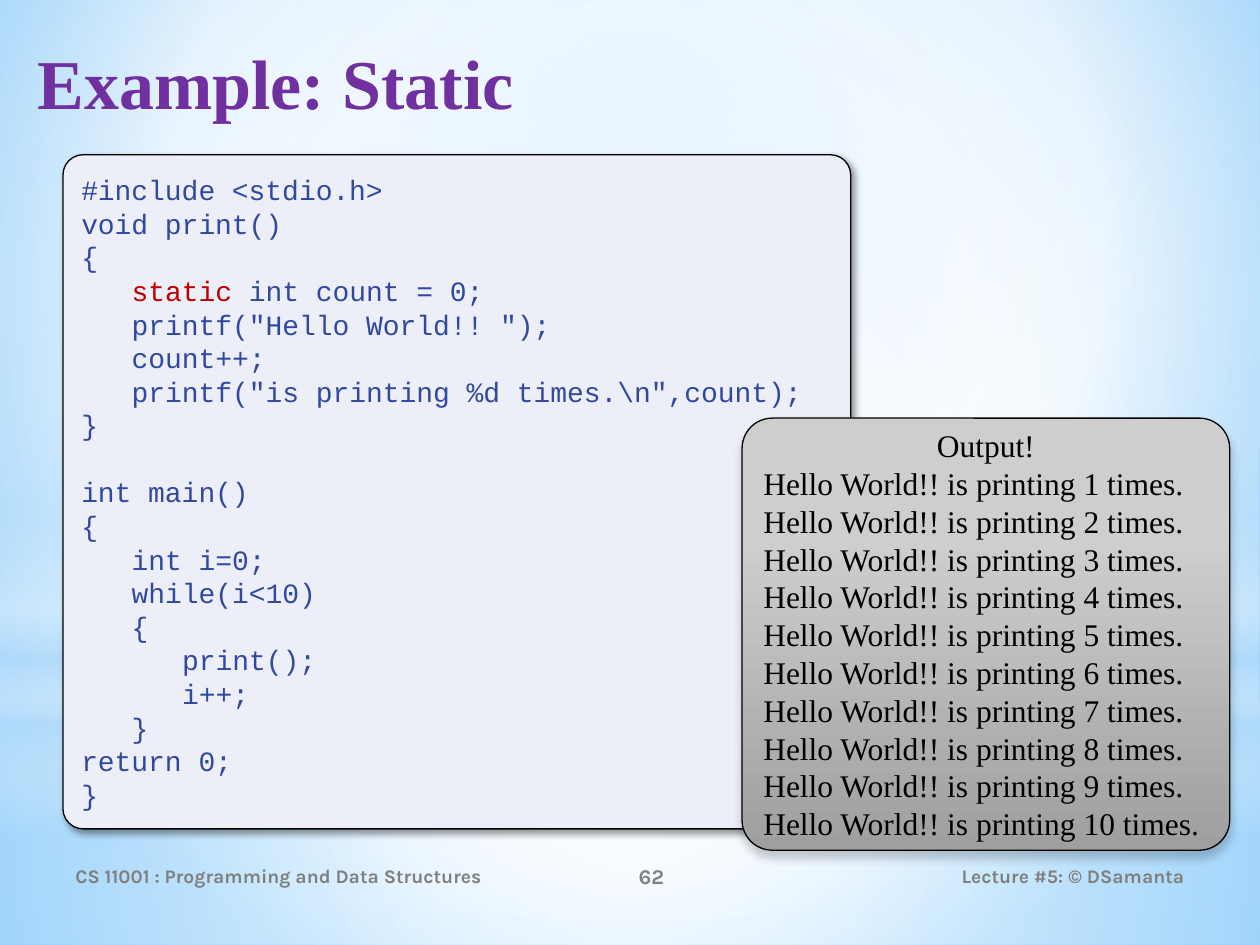
from dataclasses import dataclass

from lxml.etree import SubElement as Sub
from pptx import Presentation
from pptx.dml.color import RGBColor as Rgb
from pptx.enum.shapes import MSO_SHAPE as Form
from pptx.enum.text import MSO_ANCHOR as Anchor, PP_ALIGN as Align
from pptx.oxml import parse_xml
from pptx.oxml.ns import nsdecls, qn
from pptx.util import Cm, Pt


@dataclass(frozen=True)
class Theme:
    serif: str = "Times New Roman"
    mono: str = "Courier New"
    sans: str = "Karla"
    title: str = "7030A0"
    code: str = "31489F"
    key: str = "C00000"
    foot: str = "808080"
    ink: str = "000000"
    panel: str = "ECEFF8"
    white: str = "FFFFFF"
    sky: str = "B4DCFA"
    deep: str = "5BB9FF"
    pale: str = "9ED5FF"
    light: str = "CECECE"
    dark: str = "9F9F9F"
    head_size: float = 40
    code_size: float = 16
    out_size: float = 18
    foot_size: float = 11
    page_size: float = 12


def add_color(node, color, alpha=100):
    clr = Sub(node, qn("a:srgbClr"), val=color)
    if alpha < 100:
        Sub(clr, qn("a:alpha"), val=str(alpha * 1000))


def set_grad(host, stops, focus=None):
    """Swap the solid fill in host for a gradient; without a focus it runs down."""
    grad = parse_xml(f"<a:gradFill {nsdecls('a')} rotWithShape='1'><a:gsLst/></a:gradFill>")
    for pos, color, alpha in stops:
        add_color(Sub(grad[0], qn("a:gs"), pos=str(pos * 1000)), color, alpha)
    if focus:
        track = Sub(grad, qn("a:path"), path="circle")
        Sub(track, qn("a:fillToRect"),
            {side: str(val * 1000) for side, val in zip("ltrb", focus)})
    else:
        Sub(grad, qn("a:lin"), ang="5400000", scaled="0")
    solid = host.find(qn("a:solidFill"))
    host.replace(solid, grad)


def put_text(para, text, *, font, size, color, bold=False, align=Align.LEFT,
             indent=0, lead=None, gap=0, key=None, key_color=None):
    """Write one paragraph; a leading key word gets its own colour."""
    para.alignment = align
    para.space_before = Pt(gap)
    if lead:
        para.line_spacing = Pt(lead)
    if indent:
        para._p.get_or_add_pPr().set("marL", str(Pt(indent)))
    parts = [(text, color)]
    if key and text.startswith(key):
        parts = [(key, key_color), (text[len(key):], color)]
    for part, tint in parts:
        run = para.add_run()
        run.text = part
        run.font.name, run.font.size, run.font.bold = font, Pt(size), bold
        run.font.color.rgb = Rgb.from_string(tint)


class Deck:
    def __init__(self, theme):
        self.theme = theme
        self.file = Presentation()
        self.file.slide_width, self.file.slide_height = Cm(25.4), Cm(19.05)
        self.slide = self.file.slides.add_slide(self.file.slide_layouts[6])

    def back(self, stops, focus):
        fill = self.slide.background.fill
        fill.solid()
        fill.fore_color.rgb = Rgb.from_string(self.theme.white)
        set_grad(self.slide.element.find(".//" + qn("p:bgPr")), stops, focus)

    def shape(self, form, box, color=None, stops=None, focus=None):
        item = self.slide.shapes.add_shape(form, *map(Cm, box))
        item.shadow.inherit = False
        item.line.fill.background()
        item.fill.solid()
        item.fill.fore_color.rgb = Rgb.from_string(color or self.theme.white)
        if stops:
            set_grad(item._element.spPr, stops, focus)
        return item

    def panel(self, box, round_by, shade, rows, **look):
        """Rounded box with a shadow; rows are (text, format) pairs."""
        item = self.shape(Form.ROUNDED_RECTANGLE, box, **look)
        item.adjustments[0] = round_by
        item.line.color.rgb = Rgb.from_string(self.theme.ink)
        item.line.width = Pt(0.75)
        alpha, blur, dist, turn = shade
        glow = Sub(item._element.spPr.find(qn("a:effectLst")), qn("a:outerShdw"),
                   blurRad=str(Pt(blur)), dist=str(Pt(dist)),
                   dir=str(turn * 60000), rotWithShape="0")
        add_color(glow, self.theme.ink, alpha)
        self.fill_in(item.text_frame, rows, Anchor.MIDDLE)

    def label(self, box, text, anchor=Anchor.MIDDLE, **style):
        item = self.slide.shapes.add_textbox(*map(Cm, box))
        self.fill_in(item.text_frame, [(text, style)], anchor)

    def fill_in(self, frame, rows, anchor):
        frame.word_wrap = True
        frame.vertical_anchor = anchor
        for num, (text, style) in enumerate(rows):
            para = frame.add_paragraph() if num else frame.paragraphs[0]
            put_text(para, text, **style)


CODE = [  # indent level, line
    (0, "#include <stdio.h>"),
    (0, "void print()"),
    (0, "{"),
    (1, "static int count = 0;"),
    (1, 'printf("Hello World!! ");'),
    (1, "count++;"),
    (1, 'printf("is printing %d times.\\n",count);'),
    (0, "}"),
    (0, "int main()"),
    (0, "{"),
    (1, "int i=0;"),
    (1, "while(i<10)"),
    (1, "{"),
    (2, "print();"),
    (2, "i++;"),
    (1, "}"),
    (0, "return 0;"),
    (0, "}"),
]


def main():
    look = Theme()
    deck = Deck(look)
    white, sky = look.white, look.sky
    mid = (50, 50, 50, 50)

    # Backdrop
    deck.back([(0, look.pale, 100), (60, white, 100), (100, look.deep, 100)],
              (20, 10, 20, 60))
    deck.shape(Form.RECTANGLE, (0, 14.17, 25.4, 4.88), focus=mid,
               stops=[(0, white, 91), (37, white, 76), (100, sky, 79)])
    deck.shape(Form.RECTANGLE, (0, 0, 25.4, 14.17), focus=mid,
               stops=[(0, white, 89), (48, white, 62), (100, sky, 79)])
    deck.shape(Form.RECTANGLE, (0, 10.46, 25.4, 6.35),
               stops=[(0, white, 0), (29, white, 30), (45, sky, 40),
                      (55, white, 26), (65, sky, 60), (100, white, 0)])
    deck.shape(Form.OVAL, (0, 4.45, 25.4, 14.17), focus=mid,
               stops=[(0, white, 100), (56, white, 0)])

    # Title
    deck.label((0.51, 0.68, 24.2, 3.18), "Example: Static", Anchor.TOP,
               font=look.serif, size=look.head_size, color=look.title, bold=True)

    # Footer
    for left, width, text, size, align in (
        (1.27, 9.32, "CS 11001 : Programming and Data Structures", look.foot_size, Align.LEFT),
        (10.59, 5.08, "62", look.page_size, Align.CENTER),
        (17.15, 6.98, "Lecture #5: © DSamanta", look.foot_size, Align.RIGHT),
    ):
        deck.label((left, 17.15, width, 1.02), text, font=look.sans, size=size,
                   color=look.foot, bold=True, align=align)

    # Code: a level is three letters wide, main() stands one line apart
    lead = 1.2 * look.code_size
    style = dict(font=look.mono, size=look.code_size, color=look.code, lead=lead,
                 key="static", key_color=look.key)
    rows = [(text, dict(style, indent=level * 1.8 * look.code_size,
                        gap=lead if text == "int main()" else 0))
            for level, text in CODE]
    deck.panel((1.27, 3.12, 15.88, 13.59), 0.03, (40, 4, 3, 45), rows, color=look.panel)

    # Output
    style = dict(font=look.serif, size=look.out_size, color=look.ink,
                 lead=1.2 * look.out_size)
    rows = [("Output!", dict(style, align=Align.CENTER))]
    rows += [(f"Hello World!! is printing {num} times.", style) for num in range(1, 11)]
    deck.panel((14.96, 8.43, 9.83, 8.71), 0.07, (20, 5, 4, 90), rows,
               stops=[(28, look.light, 100), (100, look.dark, 100)])

    deck.file.save("out.pptx")


if __name__ == "__main__":
    main()
